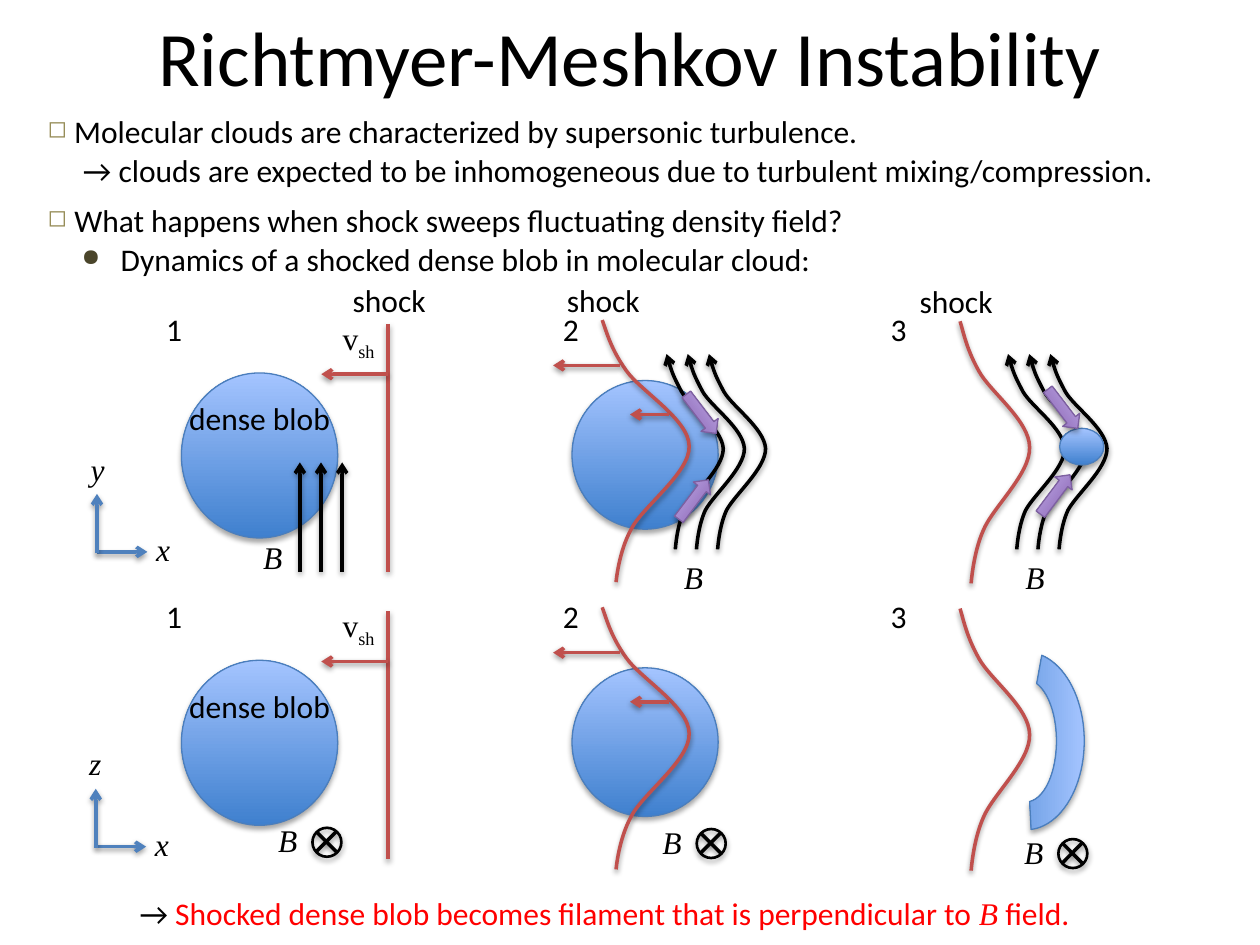
from lxml import etree
from pptx import Presentation
from pptx import util as u
from pptx.dml import color
from pptx.enum import shapes, text
from pptx.oxml import ns

COLUMNS, ROWS = 100, 75
SANS, SERIF = "Calibri", "Times New Roman"
COLORS = {
    "ink": "000000", "alert": "FF0000", "shock": "C0504D", "axis": "4F81BD",
    "square": "948A54", "dot": "4A452A",
    "blob_dark": "3F80CE", "blob_light": "A4C4FF", "blob_edge": "4B7EBC",
    "flow_dark": "7F5BAB", "flow_light": "C8B0ED", "flow_edge": "7D60A0",
}
SHOCK_CURVE = [(0, 0), (0.4, 1.1), (0.7, 2.3), (1.9, 4), (3, 5.6), (6.9, 7.9), (6.9, 10),
               (7, 12.1), (3.2, 14.8), (2.3, 16.6), (1.3, 18.4), (1.1, 20.8), (1.1, 20.8)]
FIELD_CURVE = [(0, 0), (0.2, 0.8), (0.5, 1.7), (1.2, 3), (1.9, 4.2), (4.4, 5.9), (4.5, 7.5),
               (4.5, 9.1), (2.1, 11.1), (1.4, 12.4), (0.8, 13.7), (0.7, 15.5), (0.7, 15.5)]
FIELD_GAP = 1.68
ROW_STEP = 22.8


def rgb(name):
    return color.RGBColor.from_string(COLORS[name])


def add_element(parent, tag, **attributes):
    return etree.SubElement(parent, ns.qn(tag), {k: str(v) for k, v in attributes.items()})


class Sketch:
    def __init__(self, presentation):
        self.column = presentation.slide_width / COLUMNS
        self.row = presentation.slide_height / ROWS
        self.slide = presentation.slides.add_slide(presentation.slide_layouts[6])
        self.shapes = self.slide.shapes

    def place(self, x, y):
        return u.Emu(round(x * self.column)), u.Emu(round(y * self.row))

    def add_shadow(self, shape, distance, alpha):
        effects = add_element(shape._element.spPr, "a:effectLst")
        shadow = add_element(effects, "a:outerShdw", blurRad=u.Pt(3.1), dist=u.Pt(distance),
                             dir=5400000, rotWithShape=0)
        shade = add_element(shadow, "a:srgbClr", val=COLORS["ink"])
        add_element(shade, "a:alpha", val=alpha * 1000)

    def stroke(self, shape, name, end=None):
        shape.line.color.rgb = rgb(name)
        shape.line.width = u.Pt(2)
        if end:
            add_element(shape.line._get_or_add_ln(), end, type="arrow")
        self.add_shadow(shape, 1.6, 38)

    def text(self, x, y, width, runs, height=4, size=18, font=SANS, italic=False, align=None,
             anchor=text.MSO_ANCHOR.TOP, bullet=None, hang=0):
        box = self.shapes.add_textbox(*self.place(x, y), *self.place(width, height))
        frame = box.text_frame
        frame.word_wrap = True
        frame.vertical_anchor = anchor
        paragraph = frame.paragraphs[0]
        if align:
            paragraph.alignment = align
        if bullet:
            symbol, name = bullet
            indent = self.place(hang, 0)[0]
            properties = paragraph._p.get_or_add_pPr()
            properties.set("marL", str(indent))
            properties.set("indent", str(-indent))
            add_element(add_element(properties, "a:buClr"), "a:srgbClr", val=COLORS[name])
            add_element(properties, "a:buSzPct", val=75000)
            add_element(properties, "a:buChar", char=symbol)
        for words, style in [(runs, {})] if isinstance(runs, str) else runs:
            run = paragraph.add_run()
            run.text = words
            run.font.size = u.Pt(size)
            run.font.name = style.get("font", font)
            run.font.italic = style.get("italic", italic)
            run.font.color.rgb = rgb(style.get("color", "ink"))
            if "baseline" in style:
                run._r.get_or_add_rPr().set("baseline", str(style["baseline"]))

    def symbol(self, x, y, letter, width=6.3):
        self.text(x, y, width, letter, font=SERIF, italic=True)

    def line(self, start, end, name, arrow=True):
        connector = self.shapes.add_connector(
            shapes.MSO_CONNECTOR.STRAIGHT, *self.place(*start), *self.place(*end))
        self.stroke(connector, name, "a:tailEnd" if arrow else None)

    def curve(self, x, y, points, name, stretch=1, arrow=False):
        points = [self.place(x + dx * stretch, y + dy) for dx, dy in points]
        builder = self.shapes.build_freeform(*points[0])
        builder.add_line_segments(points[1:], close=False)
        shape = builder.convert_to_shape()
        segments = list(shape._element.iter(ns.qn("a:lnTo")))
        outline = segments[0].getparent()
        for first in range(0, len(segments), 3):
            bezier = add_element(outline, "a:cubicBezTo")
            for segment in segments[first:first + 3]:
                bezier.append(segment[0])
                outline.remove(segment)
        shape.fill.background()
        self.stroke(shape, name, "a:headEnd" if arrow else None)

    def solid(self, kind, x, y, width, height, tone="blob", rotation=0, adjustments=()):
        shape = self.shapes.add_shape(kind, *self.place(x, y), *self.place(width, height))
        shape.rotation = rotation
        for index, value in enumerate(adjustments):
            shape.adjustments[index] = value
        if tone:
            shape.fill.gradient()
            shape.fill.gradient_angle = 90
            for stop, shade in zip(shape.fill.gradient_stops, ("dark", "light")):
                stop.color.rgb = rgb(f"{tone}_{shade}")
        else:
            shape.fill.background()
        shape.line.color.rgb = rgb(f"{tone}_edge" if tone else "ink")
        shape.line.width = u.Pt(0.75 if tone else 1.5)
        self.add_shadow(shape, 1.8, 35)

    def ellipse(self, x, y, width, height, tone="blob"):
        self.solid(shapes.MSO_SHAPE.OVAL, x, y, width, height, tone)

    def flow_arrows(self, x, y):
        for dx, dy, rotation in ((0.6, 0, 52.7), (0, 6.8, 306.9)):
            self.solid(shapes.MSO_SHAPE.RIGHT_ARROW, x + dx, y + dy, 3.9, 1.7, "flow", rotation)

    def field_curves(self, x):
        for index in range(3):
            self.curve(x + index * FIELD_GAP, 28.1, FIELD_CURVE, "ink", arrow=True)

    def field_into_page(self, x, y):
        self.shapes = self.slide.shapes.add_group_shape().shapes
        self.line((x + 1.9, y + 0.3), (x + 0.3, y + 1.9), "ink", arrow=False)
        self.line((x + 0.3, y + 0.3), (x + 1.9, y + 1.9), "ink", arrow=False)
        self.ellipse(x, y, 2.3, 2.3, None)
        self.shapes = self.slide.shapes

    def axes(self, x, y, vertical):
        self.line((x, y), (x + 4, y), "axis")
        self.line((x, y + 0.1), (x, y - 4.6), "axis")
        self.symbol(x + 3.7, y - 2.2, "x", 3.9)
        self.symbol(x - 1.5, y - 8.6, vertical, 3.9)

    def panels(self, drop):
        self.line((30.8, 25.7 + drop), (30.8, 45.4 + drop), "shock", arrow=False)
        self.ellipse(14.4, 29.6 + drop, 12.4, 13.1)
        self.ellipse(45.4, 30.2 + drop, 11.6, 11.8)
        self.curve(47.8, 25.4 + drop, SHOCK_CURVE, "shock")
        self.curve(76.2, 25.5 + drop, SHOCK_CURVE, "shock", stretch=0.8)
        for x, number in ((12.2, "1"), (43.7, "2"), (69.7, "3")):
            self.text(x, 24.1 + drop, 8.7, number)
        self.text(12.5, 31.2 + drop, 16.2, "dense blob", align=text.PP_ALIGN.CENTER)
        self.text(26.2, 24.8 + drop, 6.1, [("v", {}), ("sh", {"baseline": -25000})], font=SERIF)
        for start, end, y in ((30.8, 25.5, 29.7), (49.2, 43.9, 29), (53.1, 50, 32.9)):
            self.line((start, y + drop), (end, y + drop), "shock")


def main():
    presentation = Presentation()
    presentation.slide_width, presentation.slide_height = u.Inches(10), u.Inches(7.5)
    sketch = Sketch(presentation)
    square = ("◻", "square")

    sketch.text(5, -1.8, 90, "Richtmyer-Meshkov Instability", height=12.5, size=44,
                align=text.PP_ALIGN.CENTER, anchor=text.MSO_ANCHOR.MIDDLE)
    sketch.text(2.8, 8.4, 93.7, " Molecular clouds are characterized by supersonic turbulence.",
                bullet=square)
    sketch.text(5.6, 11.5, 97.2, "→ clouds are expected to be inhomogeneous due to "
                "turbulent mixing/compression.")
    sketch.text(2.8, 15.5, 98.2, " What happens when shock sweeps fluctuating density field?",
                bullet=square)
    sketch.text(5.5, 18.6, 74, "Dynamics of a shocked dense blob in molecular cloud:",
                bullet=("●", "dot"), hang=3.1)

    sketch.panels(0)
    for x, y, width in ((27, 21.8, 8.8), (44, 21.8, 23.6), (72, 21.9, 23.6)):
        sketch.text(x, y, width, "shock")
    for index in range(3):
        x = 23.8 + index * FIELD_GAP
        sketch.line((x, 45.4), (x, 36.7), "ink")
    sketch.field_curves(52.9)
    sketch.field_curves(80)
    sketch.ellipse(84.1, 34, 3.5, 2.9)
    sketch.flow_arrows(53.1, 32)
    sketch.flow_arrows(81.8, 31.6)
    for x, y in ((19.9, 42.2), (53.3, 43.8), (80.4, 43.8)):
        sketch.symbol(x, y, "B")
    sketch.axes(7.7, 43.8, "y")

    sketch.panels(ROW_STEP)
    sketch.solid(shapes.MSO_SHAPE.BLOCK_ARC, 74.4, 54.2, 14.1, 9.2, rotation=90,
                 adjustments=(114.15, 214.13, 0.24))
    for x, y in ((21.1, 64.7), (51.6, 64.8), (80.3, 65.6)):
        sketch.symbol(x, y, "B")
        sketch.field_into_page(x + 3.7, y + 1)
    sketch.axes(7.6, 67.2, "z")

    alert = {"color": "alert"}
    sketch.text(10.1, 70.5, 88.7, [
        ("→ ", {}),
        ("Shocked dense blob becomes filament that is perpendicular to ", alert),
        ("B", {**alert, "font": SERIF, "italic": True}),
        (" field.", alert)])
    presentation.save("out.pptx")


if __name__ == "__main__":
    main()
